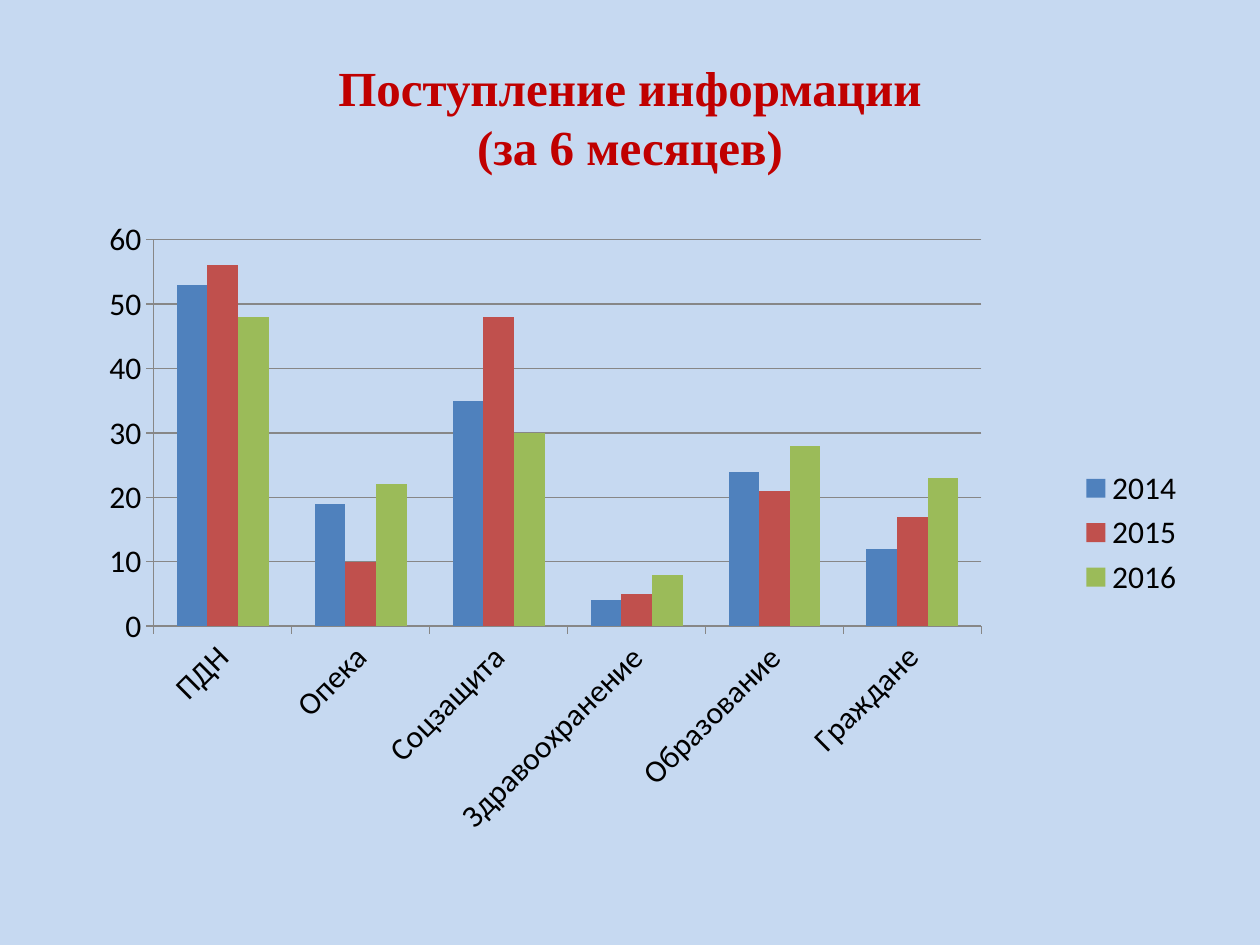
from dataclasses import dataclass

from lxml import etree
from pptx import Presentation
from pptx.chart.chart import Chart
from pptx.chart.data import CategoryChartData
from pptx.dml.color import RGBColor
from pptx.dml.line import LineFormat
from pptx.enum import chart as charts, text
from pptx.oxml import ns
from pptx.slide import Slide
from pptx.util import Cm, Pt

COLORS = {
    "background": "C6D9F1",
    "title": "C00000",
    "text": "000000",
    "line": "878787",
    "blue": "4F81BD",
    "red": "C0504D",
    "green": "9BBB59",
}


@dataclass
class YearSeries:
    year: str
    values: tuple[int, ...]
    color: str


SOURCES = ("ПДН", "Опека", "Соцзащита", "Здравоохранение", "Образование", "Граждане")
YEARS = (
    YearSeries("2014", (53, 19, 35, 4, 24, 12), "blue"),
    YearSeries("2015", (56, 10, 48, 5, 21, 17), "red"),
    YearSeries("2016", (48, 22, 30, 8, 28, 23), "green"),
)


def rgb(name: str) -> RGBColor:
    return RGBColor.from_string(COLORS[name])


def style_line(line: LineFormat) -> None:
    line.color.rgb = rgb("line")
    line.width = Pt(0.75)


def set_plot_layout(chart: Chart, **bounds: float) -> None:
    """Fix the inner plot area, in fractions of the chart's size."""
    plot_area = chart.plots[0]._element.getparent()
    for old in plot_area.findall(ns.qn("c:layout")):
        plot_area.remove(old)
    layout = etree.Element(ns.qn("c:layout"))
    manual = etree.SubElement(layout, ns.qn("c:manualLayout"))
    settings = {"layoutTarget": "inner", "xMode": "edge", "yMode": "edge", **bounds}
    for tag, value in settings.items():
        etree.SubElement(manual, ns.qn(f"c:{tag}")).set("val", str(value))
    plot_area.insert(0, layout)


def add_title(page: Slide) -> None:
    title = page.shapes.title
    title.left, title.top, title.width, title.height = Cm(1.27), Cm(0.76), Cm(22.86), Cm(3.18)
    frame = title.text_frame
    frame.text = "Поступление информации\v(за 6 месяцев)"
    frame.vertical_anchor = text.MSO_ANCHOR.MIDDLE
    paragraph = frame.paragraphs[0]
    paragraph.alignment = text.PP_ALIGN.CENTER
    for span in paragraph.runs:
        span.font.name = "Times New Roman"
        span.font.size = Pt(28)
        span.font.bold = True
        span.font.color.rgb = rgb("title")


def add_information_chart(page: Slide) -> None:
    data = CategoryChartData()
    data.categories = SOURCES
    for series in YEARS:
        data.add_series(series.year, series.values)
    chart = page.shapes.add_chart(
        charts.XL_CHART_TYPE.COLUMN_CLUSTERED, Cm(1.27), Cm(4.45), Cm(22.86), Cm(12.57), data
    ).chart
    chart.has_title = False
    chart.font.name = "Calibri"
    chart.font.size = Pt(18)
    chart.font.color.rgb = rgb("text")

    chart.has_legend = True
    chart.legend.position = charts.XL_LEGEND_POSITION.RIGHT
    chart.legend.include_in_layout = False

    plot = chart.plots[0]
    plot.gap_width = 150
    plot.overlap = 0
    plot.vary_by_categories = False
    for drawn, series in zip(plot.series, YEARS):
        drawn.format.fill.solid()
        drawn.format.fill.fore_color.rgb = rgb(series.color)

    for axis in (chart.category_axis, chart.value_axis):
        axis.major_tick_mark = charts.XL_TICK_MARK.OUTSIDE
        style_line(axis.format.line)
    chart.value_axis.minimum_scale = 0
    chart.value_axis.maximum_scale = 60
    chart.value_axis.major_unit = 10
    chart.value_axis.has_major_gridlines = True
    style_line(chart.value_axis.major_gridlines.format.line)
    set_plot_layout(chart, x=0.08, y=0.03, w=0.73, h=0.62)


def main() -> None:
    deck = Presentation()
    deck.slide_width, deck.slide_height = Cm(25.4), Cm(19.05)
    page = deck.slides.add_slide(deck.slide_layouts[5])
    page.background.fill.solid()
    page.background.fill.fore_color.rgb = rgb("background")
    add_title(page)
    add_information_chart(page)
    deck.save("out.pptx")


if __name__ == "__main__":
    main()
